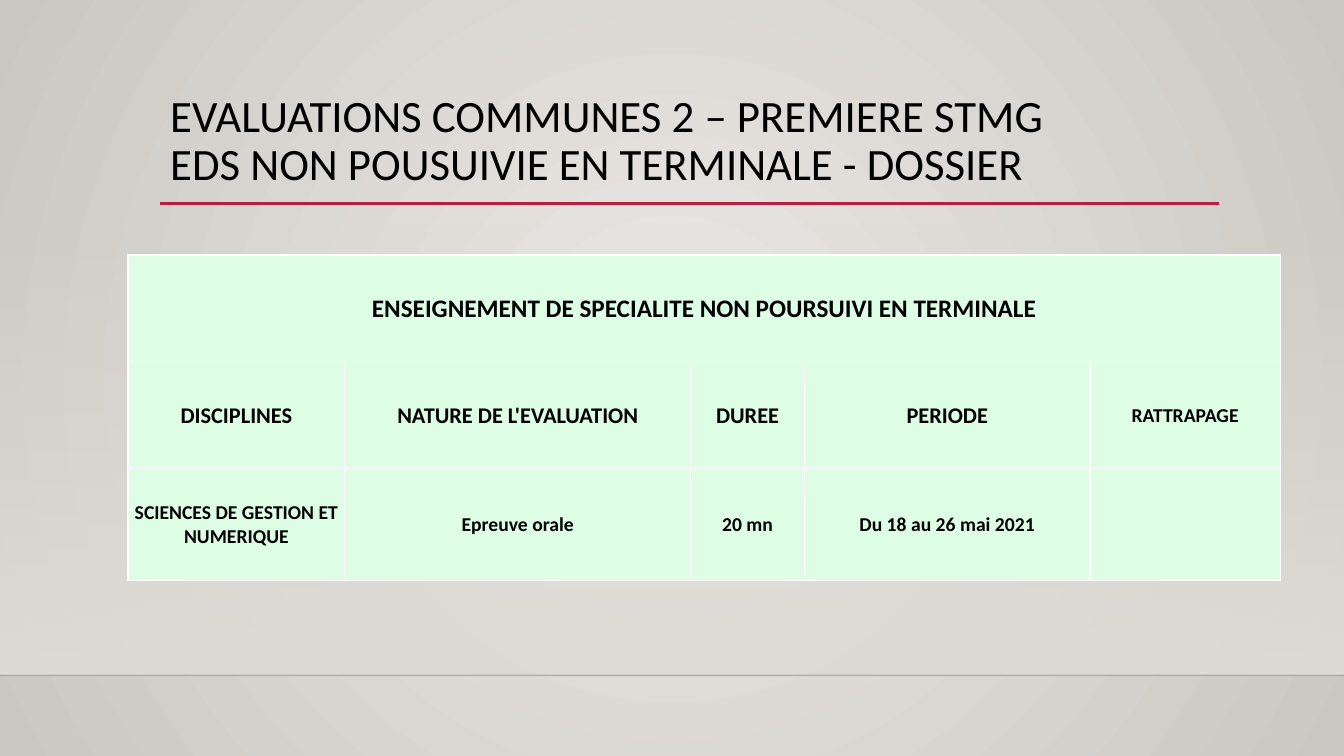
import pptx
import pptx.util
import pptx.dml.color
import pptx.enum.shapes
import pptx.enum.text
import pptx.oxml
import pptx.oxml.ns
from pptx.util import Inches

FONT = "Calibri"
NS = pptx.oxml.ns.nsdecls("a")
COLUMNS = [2.15, 3.43, 1.13, 2.83, 1.89]
ROWS = [1.06, 1.06, 1.11]
CELLS = [
    ["ENSEIGNEMENT DE SPECIALITE NON POURSUIVI EN TERMINALE", "", "", "", ""],
    ["DISCIPLINES", "NATURE DE L'EVALUATION", "DUREE", "PERIODE", "RATTRAPAGE"],
    ["SCIENCES DE GESTION ET NUMERIQUE", "Epreuve orale", "20 mn",
     "Du 18 au 26 mai 2021", ""],
]
ROW_SIZES = [18, 16, 14]


def rgb(value):
    """Return the colour for a hex string."""
    return pptx.dml.color.RGBColor.from_string(value)


def set_gradient(fill, element, stops, shade):
    """Give the fill of an element a gradient of (position, colour, opacity) stops."""
    fill.solid()
    stop_xml = "".join(
        f'<a:gs pos="{pos * 1000}"><a:srgbClr val="{color}">'
        f'<a:alpha val="{alpha * 1000}"/></a:srgbClr></a:gs>'
        for pos, color, alpha in stops)
    gradient = pptx.oxml.parse_xml(
        f'<a:gradFill {NS} rotWithShape="1"><a:gsLst>{stop_xml}</a:gsLst>{shade}</a:gradFill>')
    solid = element.find(".//" + pptx.oxml.ns.qn("a:solidFill"))
    solid.getparent().replace(solid, gradient)


def add_rule(s, left, top, width, color, weight, opacity=100):
    """Draw a horizontal line."""
    line = s.shapes.add_connector(
        pptx.enum.shapes.MSO_CONNECTOR.STRAIGHT,
        Inches(left), Inches(top), Inches(left + width), Inches(top))
    line.line.color.rgb = rgb(color)
    line.line.width = pptx.util.Pt(weight)
    sppr = line._element.spPr
    sppr.append(pptx.oxml.parse_xml(f"<a:effectLst {NS}/>"))
    if opacity < 100:
        sppr.find(".//" + pptx.oxml.ns.qn("a:srgbClr")).append(
            pptx.oxml.parse_xml(f'<a:alpha {NS} val="{opacity * 1000}"/>'))


def add_backdrop(s, width, top, height):
    """Paint the background, the fading wall and the floor line."""
    set_gradient(
        s.background.fill, s.element, [(0, "ECEAE7", 100), (100, "CAC7C1", 100)],
        '<a:path path="circle">'
        '<a:fillToRect l="50000" t="50000" r="50000" b="50000"/></a:path>')
    wall = s.shapes.add_shape(
        pptx.enum.shapes.MSO_SHAPE.RECTANGLE,
        0, Inches(top), Inches(width), Inches(height))
    wall.shadow.inherit = False
    wall.line.fill.background()
    set_gradient(wall.fill, wall._element, [(0, "DFDBD5", 0), (100, "DFDBD5", 100)],
                 '<a:lin ang="5400000" scaled="0"/>')
    add_rule(s, 0, top + height, width, "000001", 1, 20)


def add_title(s, left, top, width, height):
    """Place the two-line title and the red rule under it."""
    add_rule(s, left, top + height - 0.01, width, "B71E42", 2.5)
    tf = s.shapes.add_textbox(
        Inches(left), Inches(top), Inches(width), Inches(height)).text_frame
    tf.word_wrap = True
    p = tf.paragraphs[0]
    p.text = "EVALUATIONS COMMUNES 2 – PREMIERE STMG\vEDS NON POUSUIVIE EN TERMINALE - DOSSIER"
    p.line_spacing = 0.9
    for r in p.runs:
        r.font.name = FONT
        r.font.size = pptx.util.Pt(32)
        r.font.color.rgb = rgb("000000")


def format_cell(cell, text, size):
    """Fill one table cell with centred bold text and white borders."""
    cell.margin_left = cell.margin_right = cell.margin_top = Inches(0.01)
    cell.margin_bottom = 0
    cell.vertical_anchor = pptx.enum.text.MSO_ANCHOR.MIDDLE
    p = cell.text_frame.paragraphs[0]
    p.text = text
    p.alignment = pptx.enum.text.PP_ALIGN.CENTER
    p.font.size = pptx.util.Pt(size)
    for r in p.runs:
        r.font.name = FONT
        r.font.size = pptx.util.Pt(size)
        r.font.bold = True
        r.font.color.rgb = rgb("000000")
    tcpr = cell._tc.get_or_add_tcPr()
    for side in ("lnL", "lnR", "lnT", "lnB"):
        tcpr.append(pptx.oxml.parse_xml(
            f'<a:{side} {NS} w="12700"><a:solidFill><a:srgbClr val="FFFFFF"/>'
            f'</a:solidFill></a:{side}>'))
    cell.fill.solid()
    cell.fill.fore_color.rgb = rgb("DDFDE5")


def add_schedule(s, left, top):
    """Build the table of evaluations."""
    table = s.shapes.add_table(
        len(ROWS), len(COLUMNS), Inches(left), Inches(top),
        Inches(sum(COLUMNS)), Inches(sum(ROWS))).table
    for column, width in zip(table.columns, COLUMNS):
        column.width = Inches(width)
    for row, height in zip(table.rows, ROWS):
        row.height = Inches(height)
    for row, texts, size in zip(table.rows, CELLS, ROW_SIZES):
        for cell, text in zip(row.cells, texts):
            format_cell(cell, text, 14 if text == "RATTRAPAGE" else size)
    table.cell(0, 0).merge(table.cell(0, len(COLUMNS) - 1))


def main():
    """Build and save the slide."""
    prs = pptx.Presentation()
    prs.slide_width = Inches(13.33)
    prs.slide_height = Inches(7.5)
    s = prs.slides.add_slide(prs.slide_layouts[6])
    add_backdrop(s, 13.33, 2.21, 4.49)
    add_title(s, 1.59, 0.88, 10.5, 1.15)
    add_schedule(s, 1.27, 2.53)
    prs.save("out.pptx")


if __name__ == "__main__":
    main()
